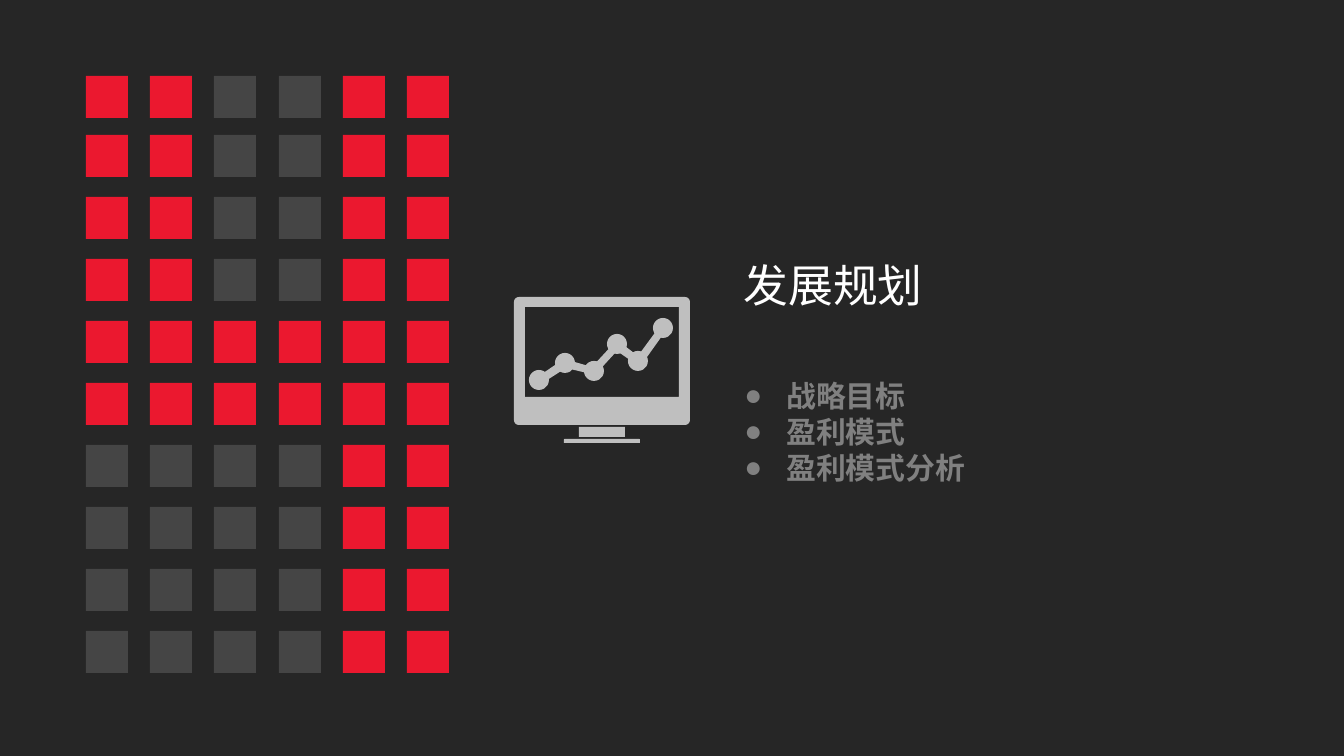
from math import cos, radians, sin

from lxml import etree
from pptx import Presentation
from pptx.dml.color import RGBColor
from pptx.enum.shapes import MSO_SHAPE
from pptx.enum.text import MSO_ANCHOR, MSO_AUTO_SIZE, PP_ALIGN
from pptx.oxml.ns import qn
from pptx.util import Pt

PX = 914400 / 134.4

DARK = RGBColor(0x26, 0x26, 0x26)
CHARCOAL = RGBColor(0x45, 0x45, 0x45)
RED = RGBColor(0xEB, 0x18, 0x2F)
SILVER = RGBColor(0xBF, 0xBF, 0xBF)
GRAY = RGBColor(0x80, 0x80, 0x80)
WHITE = RGBColor(0xFF, 0xFF, 0xFF)

TITLE = "发展规划"
TOPICS = ["战略目标", "盈利模式", "盈利模式分析"]
TITLE_BOX = (730, 251, 219, 69)
TOPICS_BOX = (731, 371, 280, 159)
TITLE_FORMAT = {"name": "Arial", "size": Pt(24), "bold": False}
TOPIC_FORMAT = {"name": "Arial", "size": Pt(16), "bold": True}
BULLET_INDENT = 42

# The digit four, drawn in squares
DIGIT = ["##..##"] * 4 + ["######"] * 2 + ["....##"] * 4
COLUMN_LEFTS = [round(86 + 64.25 * column) for column in range(6)]
ROW_TOPS = [76, *range(135, 632, 62)]
SQUARE = 42

MONITOR = (514, 297, 690, 425)
MONITOR_RADIUS = 5
SCREEN = [(525, 307), (525, 397), (679, 397), (679, 307)]
STAND = (579, 427, 46, 10)
BASE = (564, 439, 76, 4)
DOT = 20
DOT_CENTERS = [(539, 380), (565, 363), (594, 371), (617, 344), (638, 361), (663, 328)]
TREND = [
    (536, 383), (536, 378), (564, 359), (592, 367), (617, 340), (638, 356),
    (660, 326), (665, 325), (667, 329), (640, 367), (617, 351), (595, 375),
    (566, 368), (541, 384),
]


def emu(*lengths):
    return [round(length * PX) for length in lengths]


def paint(shape, color):
    shape.fill.solid()
    shape.fill.fore_color.rgb = color
    shape.line.fill.background()
    shape.shadow.inherit = False


def add_preset(group, kind, box, color):
    shape = group.shapes.add_shape(kind, *emu(*box))
    paint(shape, color)


def add_outline(group, contours, color):
    """Add one freeform; a second contour inside the first cuts a hole."""
    builder = None
    for contour in contours:
        first, *rest = [emu(*point) for point in contour]
        if builder is None:
            builder = group.shapes.build_freeform(*first, scale=1.0)
        else:
            builder.move_to(*first)
        builder.add_line_segments(rest, close=True)
    paint(builder.convert_to_shape(), color)


def rounded_contour(left, top, right, bottom, radius):
    centers = [
        (right - radius, bottom - radius), (left + radius, bottom - radius),
        (left + radius, top + radius), (right - radius, top + radius),
    ]
    return [
        (x + radius * cos(radians(angle)), y + radius * sin(radians(angle)))
        for corner, (x, y) in enumerate(centers)
        for angle in range(90 * corner, 90 * corner + 91, 15)
    ]


def add_digit(slide):
    for mark, color in ((".", CHARCOAL), ("#", RED)):
        group = slide.shapes.add_group_shape()
        for top, marks in zip(ROW_TOPS, DIGIT):
            for left, cell in zip(COLUMN_LEFTS, marks):
                if cell == mark:
                    add_preset(group, MSO_SHAPE.RECTANGLE, (left, top, SQUARE, SQUARE), color)


def add_monitor(slide):
    group = slide.shapes.add_group_shape()
    add_preset(group, MSO_SHAPE.RECTANGLE, STAND, SILVER)
    frame = rounded_contour(*MONITOR, MONITOR_RADIUS)
    add_outline(group, [frame, SCREEN], SILVER)
    add_preset(group, MSO_SHAPE.ROUND_2_SAME_RECTANGLE, BASE, SILVER)
    for x, y in DOT_CENTERS:
        add_preset(group, MSO_SHAPE.OVAL, (x - DOT / 2, y - DOT / 2, DOT, DOT), SILVER)
    add_outline(group, [TREND], SILVER)


def fill_placeholder(placeholder, box, lines, font_format, color):
    placeholder.left, placeholder.top, placeholder.width, placeholder.height = emu(*box)
    frame = placeholder.text_frame
    frame.text = "\n".join(lines)
    frame.word_wrap = True
    frame.auto_size = MSO_AUTO_SIZE.NONE
    frame.vertical_anchor = MSO_ANCHOR.TOP
    for paragraph in frame.paragraphs:
        paragraph.alignment = PP_ALIGN.LEFT
        paragraph.space_before = Pt(0)
        font = paragraph.runs[0].font
        for name, value in font_format.items():
            setattr(font, name, value)
        font.color.rgb = color


def add_bullet(paragraph):
    properties = paragraph._p.get_or_add_pPr()
    indent = emu(BULLET_INDENT)[0]
    properties.set("marL", str(indent))
    properties.set("indent", str(-indent))
    etree.SubElement(properties, qn("a:buFont"), typeface="Arial")
    etree.SubElement(properties, qn("a:buChar"), char="●")


def main():
    presentation = Presentation()
    presentation.slide_width, presentation.slide_height = emu(1344, 756)
    slide = presentation.slides.add_slide(presentation.slide_layouts[1])
    slide.background.fill.solid()
    slide.background.fill.fore_color.rgb = DARK

    add_digit(slide)
    title, topics = slide.placeholders
    fill_placeholder(title, TITLE_BOX, [TITLE], TITLE_FORMAT, WHITE)
    fill_placeholder(topics, TOPICS_BOX, TOPICS, TOPIC_FORMAT, GRAY)
    for paragraph in topics.text_frame.paragraphs:
        add_bullet(paragraph)
    add_monitor(slide)

    presentation.save("out.pptx")


if __name__ == "__main__":
    main()
